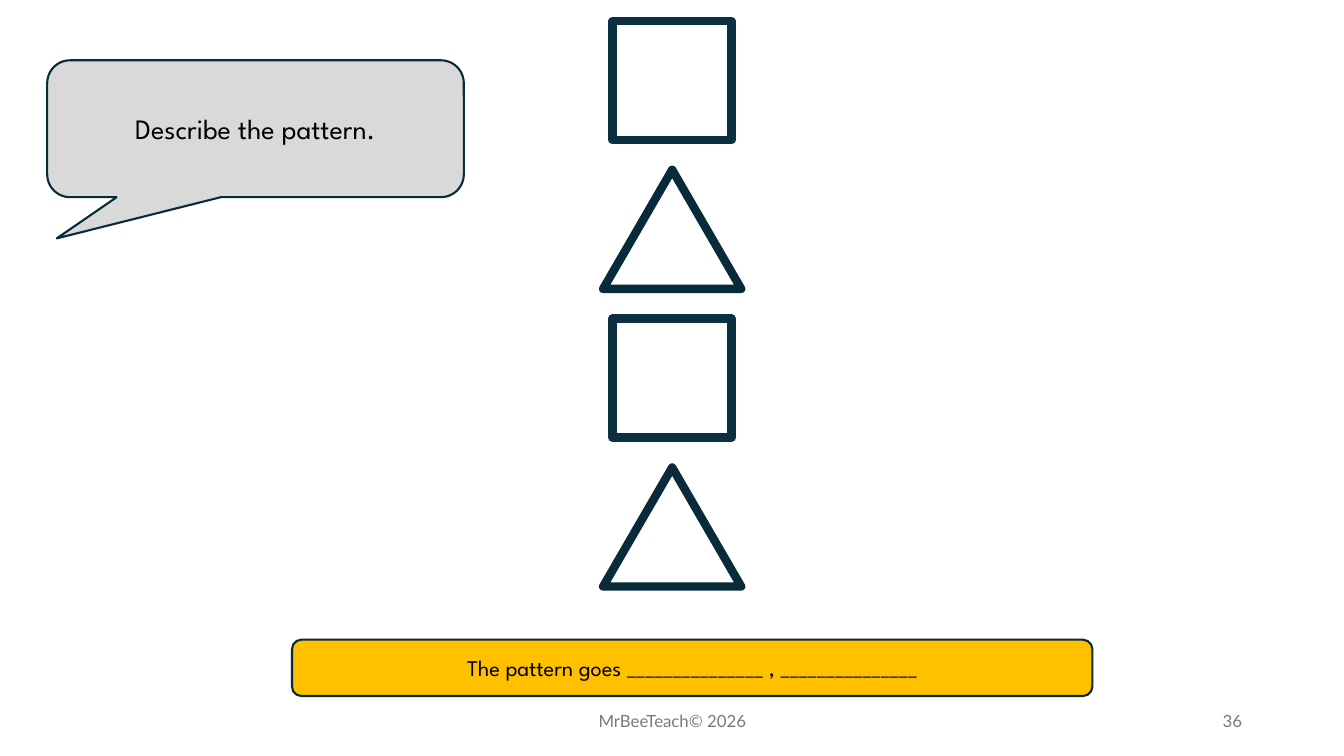
from pptx import Presentation
from pptx.dml.color import RGBColor
from pptx.enum import shapes, text
from pptx.util import Cm, Pt

SHAPE = shapes.MSO_SHAPE
ALIGN = text.PP_ALIGN
NAVY = "092A39"
PROMPT = {"name": "League Spartan", "size": Pt(20), "color": "000000"}
ANSWER = {**PROMPT, "size": Pt(16)}
FOOTER = {"name": "Lato", "size": Pt(12), "color": "797979"}


def rgb(value):
    """Return the colour for a hex string."""
    return RGBColor.from_string(value)


def write(sp, words, style, align=ALIGN.CENTER):
    """Write one line, centred vertically, in the given style."""
    tf = sp.text_frame
    tf.word_wrap = True
    tf.vertical_anchor = text.MSO_ANCHOR.MIDDLE
    p = tf.paragraphs[0]
    p.alignment = align
    r = p.add_run()
    r.text = words
    for key, value in style.items():
        if key == "color":
            r.font.color.rgb = rgb(value)
        else:
            setattr(r.font, key, value)


def add_outlined(s, kind, box, line, width, fill=None):
    """Add a preset shape with an outline and an optional fill."""
    sp = s.shapes.add_shape(kind, *map(Cm, box))
    sp.shadow.inherit = False
    if fill:
        sp.fill.solid()
        sp.fill.fore_color.rgb = rgb(fill)
    else:
        sp.fill.background()
    sp.line.color.rgb = rgb(line)
    sp.line.width = Pt(width)
    return sp


def add_prompt(s, box):
    """Add the speech bubble with the question."""
    sp = add_outlined(s, SHAPE.ROUNDED_RECTANGULAR_CALLOUT, box, NAVY, 1.5, "D9D9D9")
    for i, value in enumerate((-0.477, 0.801, 0.167)):
        sp.adjustments[i] = value
    write(sp, "Describe the pattern.", PROMPT)


def add_pattern(s, box, repeats=2):
    """Stack alternating squares and triangles, centred in the box."""
    left, top, width, height = box
    side = 3
    kinds = [(SHAPE.RECTANGLE, side, "0B3041"),
             (SHAPE.ISOSCELES_TRIANGLE, width, NAVY)] * repeats
    pitch = (height - side) / (len(kinds) - 1)
    for i, (kind, w, line) in enumerate(kinds):
        x = left + (width - w) / 2
        add_outlined(s, kind, (x, top + i * pitch, w, side), line, 6)


def add_answer(s, box):
    """Add the sentence frame to complete."""
    sp = add_outlined(s, SHAPE.ROUNDED_RECTANGLE, box, NAVY, 1.5, "FFC000")
    blank = "_" * 15
    write(sp, f"The pattern goes {blank} , {blank}", ANSWER)


def add_footer(s, box):
    """Add the copyright line at the left and the page number at the right."""
    left, top, width, height = box
    page_width = 7.62
    parts = [("MrBeeTeach© 2026", left, 11.43, ALIGN.CENTER),
             ("36", left + width - page_width, page_width, ALIGN.RIGHT)]
    for words, x, w, align in parts:
        sp = s.shapes.add_textbox(*map(Cm, (x, top, w, height)))
        write(sp, words, FOOTER, align)


def main():
    """Build and save the slide."""
    prs = Presentation()
    prs.slide_width, prs.slide_height = Cm(33.87), Cm(19.05)
    s = prs.slides.add_slide(prs.slide_layouts[6])
    add_footer(s, (11.23, 17.65, 20.32, 1.02))
    add_prompt(s, (1.19, 1.52, 10.5, 3.45))
    add_pattern(s, (15.2, 0.53, 3.48, 14.25))
    add_answer(s, (7.36, 16.12, 20.17, 1.42))
    prs.save("out.pptx")


if __name__ == "__main__":
    main()
